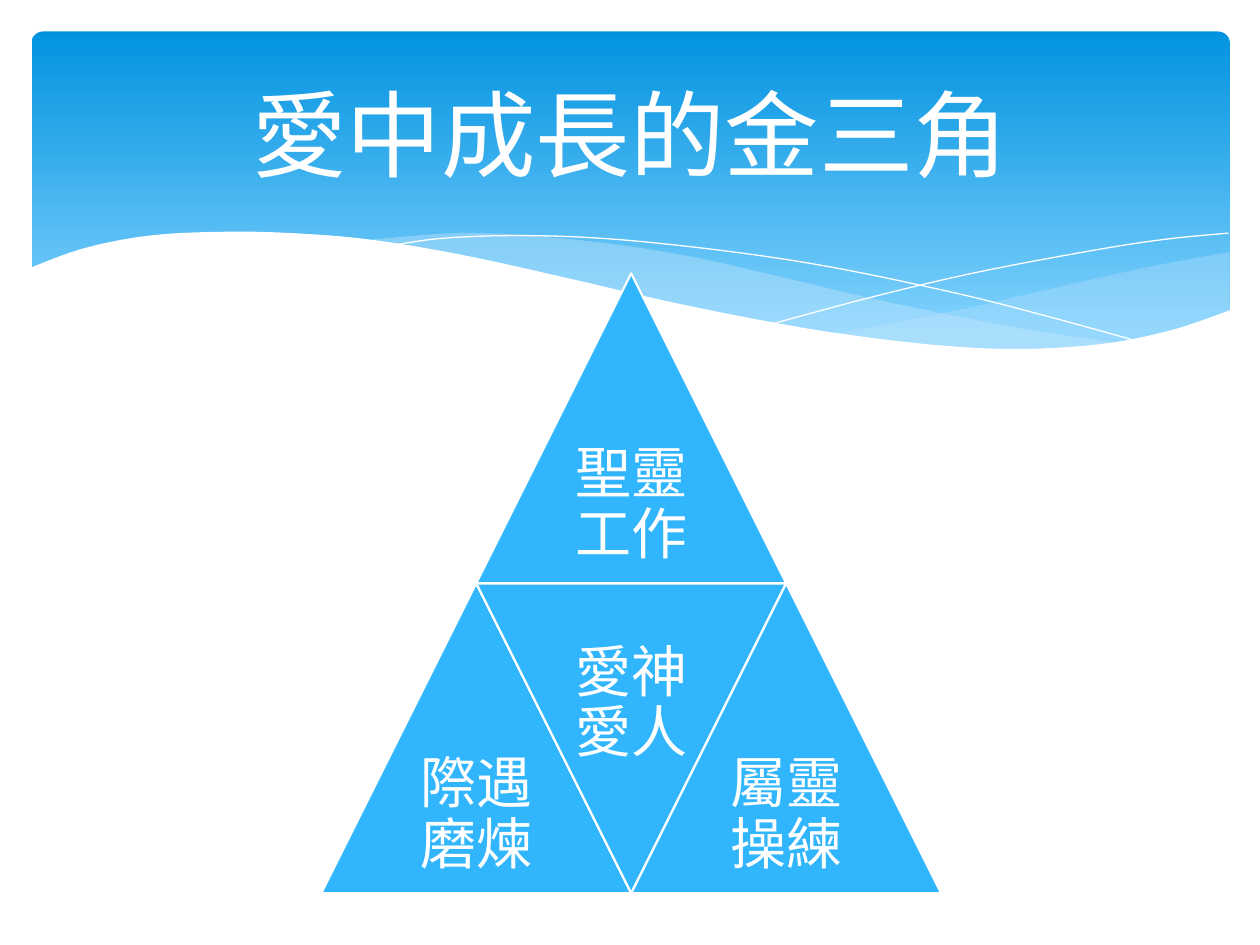
from pptx import Presentation
from pptx.dml.color import RGBColor
from pptx.enum.shapes import MSO_SHAPE
from pptx.enum.text import MSO_ANCHOR, PP_ALIGN
from pptx.oxml.ns import qn
from pptx.util import Inches, Pt
from lxml import etree

TRIANGLE = MSO_SHAPE.ISOSCELES_TRIANGLE
ROUND_RECT = MSO_SHAPE.ROUNDED_RECTANGLE
MIDDLE = MSO_ANCHOR.MIDDLE
CENTER = PP_ALIGN.CENTER
WHITE, BLUE, PALE = "FFFFFF", "31B6FD", "C6E7FC"
FONT = "Arial"
SIDE = 2.46
APEX_X, APEX_Y = 5.01, 2.17


def rgb(value):
    """Return a colour from a hex string."""
    return RGBColor.from_string(value)


def spline(knots, steps=8):
    """Return points on a smooth curve through the knots."""
    pts = [knots[0], *knots, knots[-1]]
    curve = [knots[0]]
    for a, b, c, d in zip(pts, pts[1:], pts[2:], pts[3:]):
        for i in range(1, steps + 1):
            t = i / steps
            curve.append(tuple(
                q + t / 2 * (r - p + t * (2 * p - 5 * q + 4 * r - s
                                          + t * (3 * (q - r) + s - p)))
                for p, q, r, s in zip(a, b, c, d)))
    return curve


def add_outline(slide, points, close):
    """Draw a freeform through points given in inches."""
    pts = [(Inches(x), Inches(y)) for x, y in points]
    builder = slide.shapes.build_freeform(*pts[0])
    builder.add_line_segments(pts[1:], close=close)
    sp = builder.convert_to_shape()
    sp.shadow.inherit = False
    return sp


def add_wave(slide, points, color, opacity=100):
    """Add a filled wave with the given opacity in percent."""
    sp = add_outline(slide, points, True)
    sp.fill.solid()
    sp.fill.fore_color.rgb = rgb(color)
    sp.line.fill.background()
    if opacity < 100:
        clr = sp._element.spPr.find(qn("a:solidFill"))[0]
        etree.SubElement(clr, qn("a:alpha")).set("val", str(opacity * 1000))


def add_curve(slide, knots):
    """Add a white hairline curve."""
    sp = add_outline(slide, spline(knots), False)
    sp.fill.background()
    sp.line.color.rgb = rgb(WHITE)
    sp.line.width = Pt(0)


def add_band(slide):
    """Add the rounded gradient band behind the title."""
    sp = slide.shapes.add_shape(ROUND_RECT, Inches(0.25), Inches(0.25),
                                Inches(9.51), Inches(2.7))
    sp.adjustments[0] = 0.034
    sp.shadow.inherit = False
    sp.line.fill.background()
    sp.fill.gradient()
    sp.fill.gradient_angle = 270
    stops = ((0, "0293E0"), (0.9, "83D3FE"))
    for stop, (position, color) in zip(sp.fill.gradient_stops, stops):
        stop.position = position
        stop.color.rgb = rgb(color)


def add_header(slide):
    """Add the band with its waves and curves."""
    add_band(slide)
    add_wave(slide, spline([(9.76, 2), (9.21, 2.1), (8.61, 2.23), (7.79, 2.42),
                            (7.06, 2.57), (6.61, 2.65)])
             + spline([(6.61, 2.65), (7.05, 2.71), (7.57, 2.76), (8.14, 2.78),
                       (8.72, 2.74), (9.28, 2.63), (9.76, 2.47)]), PALE, 29)
    add_wave(slide, spline([(8.93, 2.73), (8.07, 2.6), (7.06, 2.4), (6.29, 2.22),
                            (5.55, 2.05), (4.89, 1.94), (4.2, 1.87),
                            (3.61, 1.85), (2.86, 1.91)])
             + spline([(2.86, 1.91), (3.62, 2.03), (4.49, 2.22), (5.3, 2.4),
                       (6.18, 2.58), (6.95, 2.7), (7.61, 2.77), (8.28, 2.78),
                       (8.93, 2.73)]), PALE, 40)
    add_curve(slide, [(3.09, 1.95), (3.53, 1.89), (4.16, 1.87), (4.89, 1.9),
                      (5.82, 2), (6.65, 2.13), (7.6, 2.33), (8.31, 2.51),
                      (9.07, 2.72)])
    add_curve(slide, [(6.13, 2.57), (6.95, 2.35), (7.76, 2.16), (8.66, 1.99),
                      (9.24, 1.9), (9.75, 1.85)])
    edge = spline([(9.77, 2.46), (9.3, 2.62), (8.75, 2.73), (8.09, 2.77),
                   (7.44, 2.74), (6.68, 2.65), (6.03, 2.54), (5.29, 2.39),
                   (4.47, 2.2), (3.65, 2.02), (2.92, 1.9), (2.3, 1.85),
                   (1.77, 1.84), (1.19, 1.87), (0.67, 1.97), (0.23, 2.13)])
    add_wave(slide, edge + [(0.23, 3.29), (9.77, 3.29)], WHITE)


def style_text(sp, text, size):
    """Set centred white text and return its paragraph."""
    tf = sp.text_frame
    tf.text = text
    tf.word_wrap = True
    tf.vertical_anchor = MIDDLE
    p = tf.paragraphs[0]
    p.alignment = CENTER
    font = p.runs[0].font
    font.size, font.name = Pt(size), FONT
    font.color.rgb = rgb(WHITE)
    return p


def add_triangle(slide, text, column, row, rotation=0, text_top=0.5):
    """Add a labelled triangle at a half-side column and a row."""
    left = APEX_X + (column - 1) * SIDE / 2
    top = APEX_Y + row * SIDE
    sp = slide.shapes.add_shape(TRIANGLE, Inches(left), Inches(top),
                                Inches(SIDE), Inches(SIDE))
    sp.rotation = rotation
    sp.shadow.inherit = False
    sp.fill.solid()
    sp.fill.fore_color.rgb = rgb(BLUE)
    sp.line.color.rgb = rgb(WHITE)
    sp.line.width = Pt(1.25)
    box = slide.shapes.add_textbox(
        Inches(left + SIDE / 4), Inches(top + text_top * SIDE),
        Inches(SIDE / 2), Inches(SIDE / 2))
    tf = box.text_frame
    tf.margin_left = tf.margin_right = Inches(0.13)
    tf.margin_top = tf.margin_bottom = Inches(0.13)
    style_text(box, text, 32).line_spacing = 0.9


def add_title(slide, text):
    """Place the title placeholder in front of the band."""
    sp = slide.shapes.title
    sp.left, sp.top = Inches(0.5), Inches(0.37)
    sp.width, sp.height = Inches(9), Inches(1.37)
    style_text(sp, text, 54)
    slide.shapes._spTree.append(sp._element)


def main():
    """Build and save the slide."""
    prs = Presentation()
    prs.slide_width, prs.slide_height = Inches(10), Inches(7.5)
    slide = prs.slides.add_slide(prs.slide_layouts[5])
    add_header(slide)
    add_triangle(slide, "聖靈工作", 0, 0)
    add_triangle(slide, "際遇磨煉", -1, 1)
    add_triangle(slide, "愛神愛人", 0, 1, rotation=180, text_top=0.14)
    add_triangle(slide, "屬靈操練", 1, 1)
    add_title(slide, "愛中成長的金三角")
    prs.save("out.pptx")


if __name__ == "__main__":
    main()
